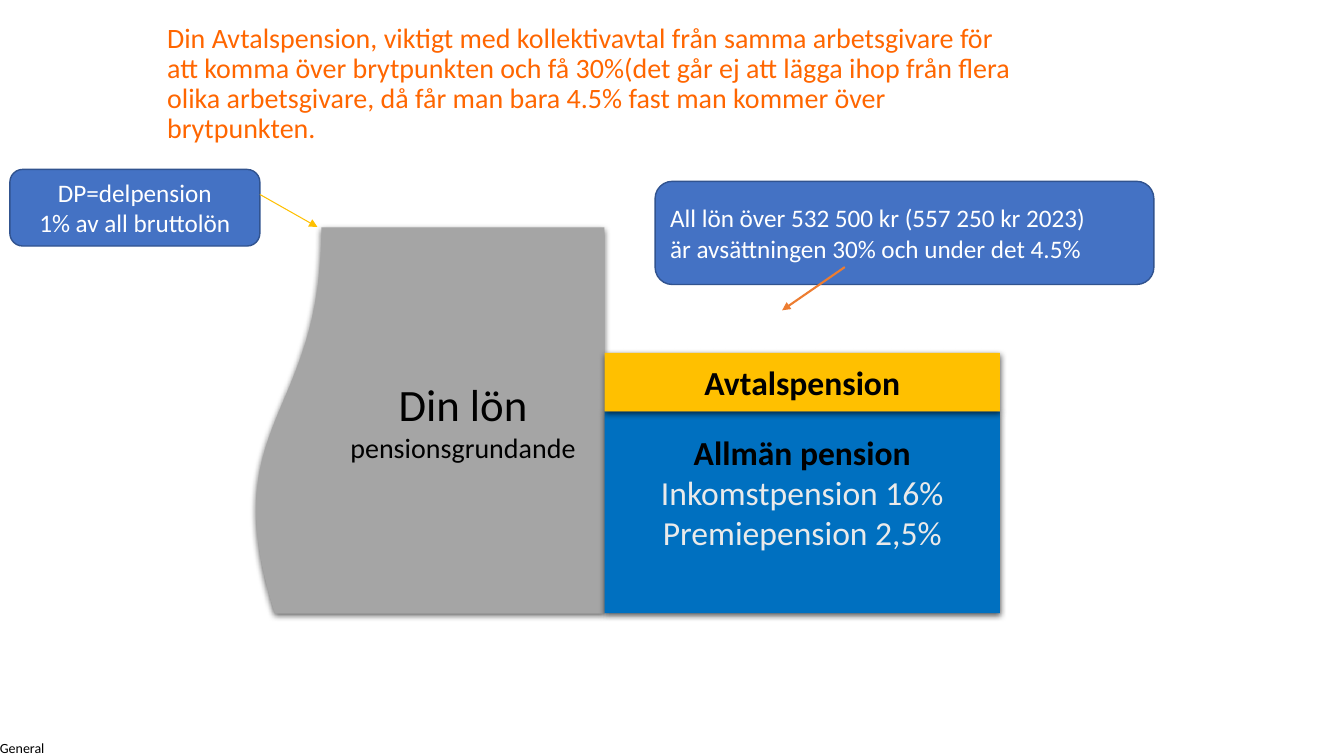
import pptx
import pptx.util
import pptx.dml.color
import pptx.enum.shapes
import pptx.enum.text
import pptx.oxml
import pptx.oxml.ns

Cm, Pt = pptx.util.Cm, pptx.util.Pt
Kind = pptx.enum.shapes.MSO_SHAPE
Align = pptx.enum.text.PP_ALIGN
Rgb = pptx.dml.color.RGBColor.from_string

hues = {
    "orange": "FF6600", "grey": "A5A5A5", "blue": "0070C0", "gold": "FFC000",
    "note": "4472C4", "edge": "31538F", "arrow": "ED7D31",
    "black": "000000", "white": "FFFFFF", "pale": "EAEAEA",
}
space = pptx.oxml.ns.nsdecls("a")
shade = (
    f'<a:effectLst {space}><a:outerShdw blurRad="57150" dist="19050" dir="5400000" '
    'algn="ctr" rotWithShape="0"><a:srgbClr val="000000"><a:alpha val="63000"/>'
    '</a:srgbClr></a:outerShdw></a:effectLst>'
)


def write(shape, lines, align):
    """Fill a shape with lines of (text, size, hue, bold)."""
    frame = shape.text_frame
    look = {
        "word_wrap": True,
        "auto_size": pptx.enum.text.MSO_AUTO_SIZE.NONE,
        "vertical_anchor": pptx.enum.text.MSO_ANCHOR.MIDDLE,
        "margin_left": Cm(0.25), "margin_right": Cm(0.25),
        "margin_top": Cm(0.13), "margin_bottom": Cm(0.13),
    }
    for name, value in look.items():
        setattr(frame, name, value)
    for i, (text, size, hue, bold) in enumerate(lines):
        para = frame.paragraphs[0] if i == 0 else frame.add_paragraph()
        para.alignment = align
        run = para.add_run()
        run.text = text
        for name, value in {"name": "Calibri", "size": Pt(size), "bold": bold}.items():
            setattr(run.font, name, value)
        run.font.color.rgb = Rgb(hues[hue])
    return frame


def draw(kind, box, fill, edge=None):
    """Add a filled shape: edged and flat, or unedged with a shadow."""
    shape = slide.shapes.add_shape(kind, *map(Cm, box))
    shape.fill.solid()
    shape.fill.fore_color.rgb = Rgb(hues[fill])
    shape.shadow.inherit = False
    if edge:
        shape.line.color.rgb = Rgb(hues[edge])
        shape.line.width = Pt(1)
    else:
        shape.line.fill.background()
        props = shape._element.spPr
        props.replace(props.find(pptx.oxml.ns.qn("a:effectLst")),
                      pptx.oxml.parse_xml(shade))
    return shape


deck = pptx.Presentation()
deck.slide_width, deck.slide_height = Cm(33.87), Cm(19.05)
slide = deck.slides.add_slide(deck.slide_layouts[5])

# Title
title = slide.shapes.title
place = {"left": 3.96, "top": 0.64, "width": 22.23, "height": 2.97}
for name, value in place.items():
    setattr(title, name, Cm(value))
frame = write(title, [(
    "Din Avtalspension, viktigt med kollektivavtal från samma arbetsgivare för "
    "att komma över brytpunkten och få 30%(det går ej att lägga ihop från flera "
    "olika arbetsgivare, då får man bara 4.5% fast man kommer över brytpunkten.",
    20, "orange", False)], Align.LEFT)
frame.paragraphs[0].line_spacing = 0.9

# Corner label
label = slide.shapes.add_textbox(Cm(0), Cm(18.62), Cm(1.22), Cm(0.43))
frame = write(label, [("General", 10, "black", False)], Align.LEFT)
for side in ("left", "right", "top", "bottom"):
    setattr(frame, f"margin_{side}", 0)
frame.word_wrap = False

# Salary block, turned so that the wave is on the left
wave = draw(Kind.FLOWCHART_DOCUMENT, (5.92, 6.15, 9.73, 8.89), "grey")
wave.rotation = 90
wave._element.spPr.xfrm.set("flipH", "1")
pay = slide.shapes.add_textbox(Cm(8.1), Cm(5.72), Cm(7.14), Cm(9.73))
write(pay, [("Din lön", 32, "black", False),
            ("pensionsgrundande", 20, "black", False)], Align.CENTER)

# Pension blocks
state = draw(Kind.RECTANGLE, (15.24, 10.37, 9.96, 5.08), "blue")
frame = write(state, [("Allmän pension", 24, "black", True),
                      ("Inkomstpension 16%", 24, "pale", False),
                      ("Premiepension 2,5%", 24, "pale", False)], Align.CENTER)
frame.margin_bottom = Cm(1.15)
work = draw(Kind.RECTANGLE, (15.24, 8.89, 9.96, 1.48), "gold")
write(work, [("Avtalspension", 24, "black", True)], Align.CENTER)

# Notes, each with its arrow: box, lines, alignment, arrow ends, hue, width
notes = [
    ((16.51, 4.57, 12.57, 2.6),
     ["All lön över 532 500 kr (557 250 kr 2023)",
      "är avsättningen 30% och under det 4.5%"],
     Align.LEFT, (21.29, 6.73, 19.71, 7.82), "arrow", 1.5),
    ((0.25, 4.27, 6.3, 1.93),
     ["DP=delpension", "1% av all bruttolön"],
     Align.CENTER, (6.55, 4.9, 8, 5.72), "gold", 0.75),
]
for box, lines, align, ends, hue, width in notes:
    note = draw(Kind.ROUNDED_RECTANGLE, box, "note", "edge")
    write(note, [(text, 18, "white", False) for text in lines], align)
    arrow = slide.shapes.add_connector(
        pptx.enum.shapes.MSO_CONNECTOR.STRAIGHT, *map(Cm, ends))
    arrow.line.color.rgb = Rgb(hues[hue])
    arrow.line.width = Pt(width)
    arrow.line._get_or_add_ln().append(
        pptx.oxml.parse_xml(f'<a:tailEnd {space} type="triangle"/>'))
    arrow._element.spPr.append(pptx.oxml.parse_xml(f"<a:effectLst {space}/>"))

deck.save("out.pptx")
